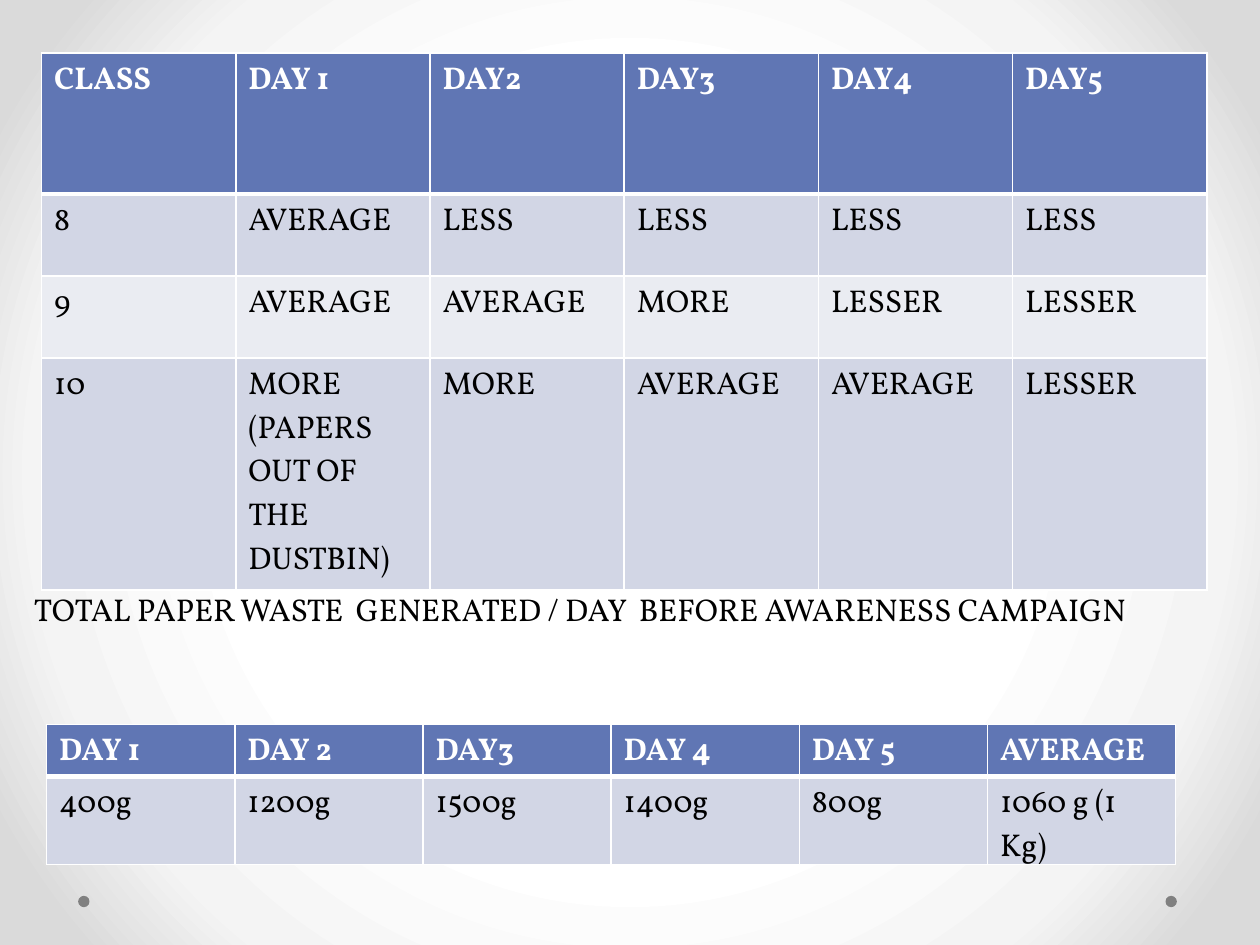
from dataclasses import dataclass

import lxml.etree
import pptx
import pptx.dml.color
import pptx.enum.shapes
import pptx.oxml
import pptx.oxml.ns
import pptx.util

COLORS = {
    "header": "6076B4",
    "band_dark": "D2D6E5",
    "band_light": "EAECF2",
    "white": "FFFFFF",
    "black": "000000",
    "dot": "808080",
}
BACKDROP = [(50, "FFFFFF"), (76, "F4F4F4"), (92, "DADADA")]
FONT = "Vollkorn"
SIZE = pptx.util.Pt(18)
WIDTH = pptx.util.Inches(10)
HEIGHT = pptx.util.Inches(7.5)


@dataclass
class Grid:
    """A table placed in percent of the slide's width and height."""
    left: float
    top: float
    width: float
    row_heights: list[float]
    rows: list[list[str]]


WASTE_LEVELS = Grid(3.3, 5.6, 92.5, [14.93, 8.67, 8.67, 8.67], [
    ["CLASS", "DAY 1", "DAY2", "DAY3", "DAY4", "DAY5"],
    ["8", "AVERAGE", "LESS", "LESS", "LESS", "LESS"],
    ["9", "AVERAGE", "AVERAGE", "MORE", "LESSER", "LESSER"],
    ["10", "MORE (PAPERS OUT OF THE DUSTBIN)", "MORE", "AVERAGE", "AVERAGE", "LESSER"],
])
WASTE_WEIGHTS = Grid(3.7, 76.67, 89.6, [5.47, 5.47], [
    ["DAY 1", "DAY 2", "DAY3", "DAY 4", "DAY 5", "AVERAGE"],
    ["400g", "1200g", "1500g", "1400g", "800g", "1060 g (1  Kg)"],
])


def x(percent: float) -> int:
    return round(WIDTH * percent / 100)


def y(percent: float) -> int:
    return round(HEIGHT * percent / 100)


def rgb(name: str) -> pptx.dml.color.RGBColor:
    return pptx.dml.color.RGBColor.from_string(COLORS[name])


def write(tf, text: str, color: str, bold: bool = False) -> None:
    tf.text = text
    font = tf.paragraphs[0].runs[0].font
    font.name, font.size, font.bold = FONT, SIZE, bold
    font.color.rgb = rgb(color)


def set_borders(cell, top: int, bottom: int) -> None:
    """White cell borders; top and bottom widths are in points."""
    tcPr = cell._tc.get_or_add_tcPr()
    widths = {"lnL": 1, "lnR": 1, "lnT": top, "lnB": bottom}
    for i, (tag, width) in enumerate(widths.items()):
        ln = pptx.oxml.parse_xml(
            f'<a:{tag} {pptx.oxml.ns.nsdecls("a")} w="{pptx.util.Pt(width)}">'
            f'<a:solidFill><a:srgbClr val="{COLORS["white"]}"/></a:solidFill></a:{tag}>')
        tcPr.insert(i, ln)


def add_grid(s, grid: Grid) -> None:
    n_cols = len(grid.rows[0])
    table = s.shapes.add_table(
        len(grid.rows), n_cols, x(grid.left), y(grid.top),
        x(grid.width), y(sum(grid.row_heights))).table
    for col in table.columns:
        col.width = x(grid.width / n_cols)
    for i, texts in enumerate(grid.rows):
        table.rows[i].height = y(grid.row_heights[i])
        header = i == 0
        fill = "header" if header else "band_dark" if i % 2 else "band_light"
        for j, text in enumerate(texts):
            cell = table.cell(i, j)
            write(cell.text_frame, text, "white" if header else "black", header)
            cell.fill.solid()
            cell.fill.fore_color.rgb = rgb(fill)
            set_borders(cell, top=3 if i == 1 else 1, bottom=3 if header else 1)


def add_dot(s, left: float) -> None:
    size = x(0.9)
    sp = s.shapes.add_shape(
        pptx.enum.shapes.MSO_SHAPE.OVAL, x(left), y(94.8), size, size)
    sp.shadow.inherit = False
    sp.fill.solid()
    sp.fill.fore_color.rgb = rgb("dot")
    sp.line.fill.background()


def set_backdrop(s) -> None:
    """Radial gradient spreading from the slide's centre."""
    s.background.fill.solid()
    bgPr = s._element.cSld.bg.bgPr
    stops = "".join(f'<a:gs pos="{pos * 1000}"><a:srgbClr val="{color}"/></a:gs>'
                    for pos, color in BACKDROP)
    grad = pptx.oxml.parse_xml(
        f'<a:gradFill {pptx.oxml.ns.nsdecls("a")} rotWithShape="1"><a:gsLst>{stops}</a:gsLst>'
        '<a:path path="circle"><a:fillToRect l="50000" t="50000" r="50000" b="50000"/>'
        '</a:path></a:gradFill>')
    bgPr.replace(bgPr[0], grad)


def main() -> None:
    prs = pptx.Presentation()
    prs.slide_width, prs.slide_height = WIDTH, HEIGHT
    s = prs.slides.add_slide(prs.slide_layouts[6])
    set_backdrop(s)
    for left in (92.5, 6.2):
        add_dot(s, left)
    add_grid(s, WASTE_LEVELS)
    tf = s.shapes.add_textbox(x(1.7), y(61.73), x(93.8), y(9.47)).text_frame
    tf.word_wrap = True
    write(tf, "TOTAL PAPER WASTE  GENERATED / DAY  BEFORE AWARENESS CAMPAIGN", "black")
    add_grid(s, WASTE_WEIGHTS)
    prs.save("out.pptx")


if __name__ == "__main__":
    main()
